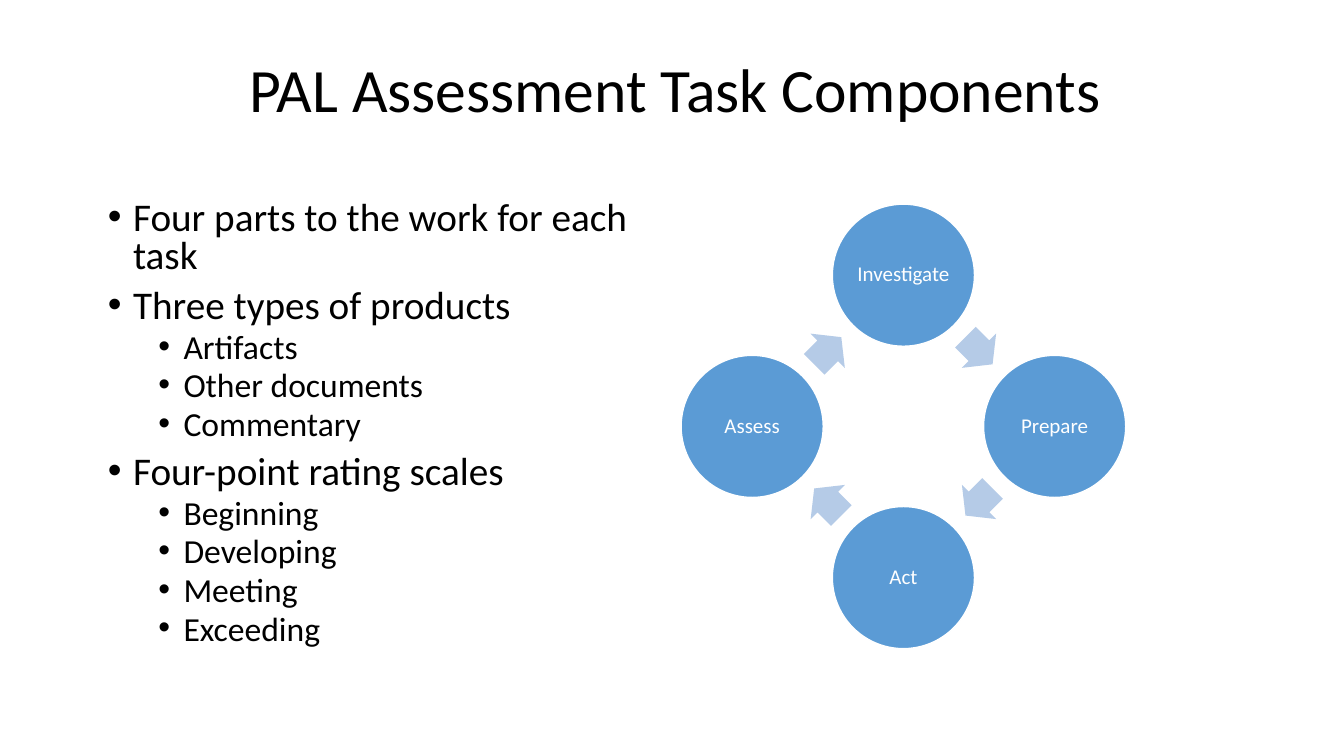
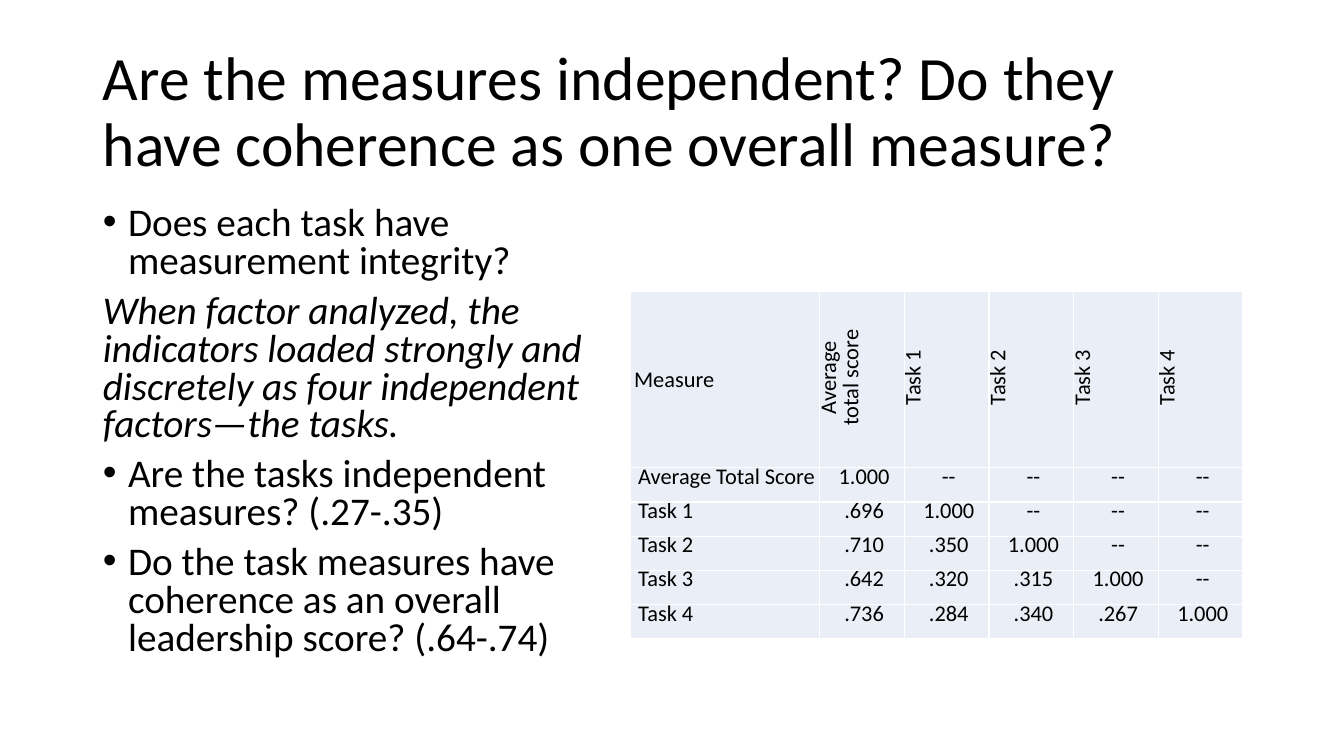
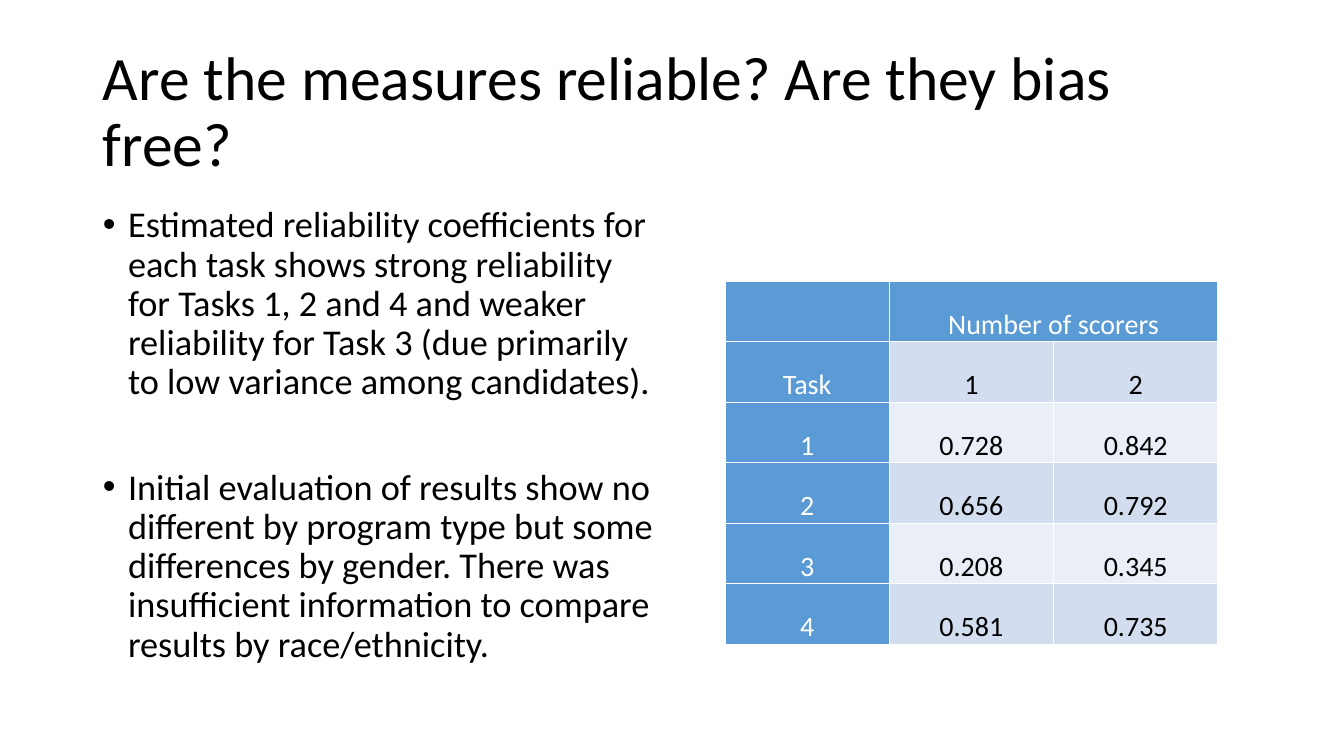
from math import cos, radians, sin

from lxml import etree
from pptx import Presentation
from pptx.dml.color import RGBColor
from pptx.enum.shapes import MSO_SHAPE
from pptx.enum.text import MSO_ANCHOR, MSO_AUTO_SIZE, PP_ALIGN
from pptx.oxml.ns import qn
from pptx.util import Inches, Pt

BLACK = RGBColor(0x00, 0x00, 0x00)
WHITE = RGBColor(0xFF, 0xFF, 0xFF)
BLUE = RGBColor(0x5B, 0x9B, 0xD5)
SOFT = RGBColor(0xB5, 0xCB, 0xE7)
BAND = RGBColor(0xD2, 0xDE, 0xEF)
PALE = RGBColor(0xEA, 0xEF, 0xF7)
FONT = "Calibri"
LEFT, CENTER = PP_ALIGN.LEFT, PP_ALIGN.CENTER
TOP, MIDDLE, BOTTOM = MSO_ANCHOR.TOP, MSO_ANCHOR.MIDDLE, MSO_ANCHOR.BOTTOM
OVAL, ARROW = MSO_SHAPE.OVAL, MSO_SHAPE.RIGHT_ARROW
NO_FIT = MSO_AUTO_SIZE.NONE


def put(para, text, size=16, color=BLACK, align=LEFT, italic=False,
        line=1.0, before=0, indent=(0, 0), bullet=False):
    """Write one formatted paragraph."""
    run = para.add_run()
    run.text = text
    font = run.font
    font.name, font.size, font.italic = FONT, Pt(size), italic
    font.color.rgb = color
    para.alignment, para.line_spacing = align, line
    para.space_before, para.space_after = Pt(before), Pt(0)
    props = para._p.get_or_add_pPr()
    props.set("marL", str(Inches(indent[0])))
    props.set("indent", str(Inches(indent[1])))
    if bullet:
        etree.SubElement(props, qn("a:buFont")).set("typeface", "Arial")
        etree.SubElement(props, qn("a:buChar")).set("char", "•")
    else:
        etree.SubElement(props, qn("a:buNone"))


class Deck:
    """Hold the shared style and the current slide."""

    def __init__(self):
        self.show = Presentation()
        self.show.slide_width = Inches(13.33)
        self.show.slide_height = Inches(7.5)
        self.slide = None

    def place(self, shape, box):
        """Move a placeholder and fix its text size."""
        shape.left, shape.top, shape.width, shape.height = map(Inches, box)
        shape.text_frame.auto_size = NO_FIT
        return shape.text_frame

    def start(self, title, box=(0.92, 0.4, 11.5, 1.45), align=LEFT):
        """Add a slide with its title."""
        self.slide = self.show.slides.add_slide(self.show.slide_layouts[1])
        frame = self.place(self.slide.shapes.title, box)
        frame.vertical_anchor = MIDDLE
        put(frame.paragraphs[0], title, size=44, align=align, line=0.9)

    def body(self, items, box=(0.92, 2, 5.67, 4.76), **style):
        """Fill the body with (text, own format) items."""
        frame = self.place(self.slide.placeholders[1], box)
        base = dict(size=28, line=0.8, before=9, indent=(0.25, -0.25),
                    bullet=True)
        for i, (text, own) in enumerate(items):
            para = frame.add_paragraph() if i else frame.paragraphs[0]
            para.level = 1 if own is SUB else 0
            put(para, text, **{**base, **style, **own})

    def shape(self, kind, mid, size, fill, turn=0):
        """Add a plain shape around a middle point."""
        (x, y), (w, h) = mid, size
        item = self.slide.shapes.add_shape(
            kind, Inches(x - w / 2), Inches(y - h / 2), Inches(w), Inches(h))
        item.shadow.inherit = False
        item.fill.solid()
        item.fill.fore_color.rgb = fill
        item.line.fill.background()
        item.rotation = turn
        return item

    def cycle(self, names, mid, radius):
        """Draw named discs on a ring with arrows between them."""
        step = 360 / len(names)

        def spot(angle, reach):
            turn = radians(angle)
            return mid[0] + reach * sin(turn), mid[1] - reach * cos(turn)

        for i, name in enumerate(names):
            disc = self.shape(OVAL, spot(i * step, radius), (1.41, 1.41), BLUE)
            disc.line.color.rgb, disc.line.width = WHITE, Pt(1)
            frame = disc.text_frame
            frame.word_wrap, frame.vertical_anchor = True, MIDDLE
            frame.margin_left = frame.margin_right = Inches(0.02)
            frame.margin_top = frame.margin_bottom = Inches(0.02)
            put(frame.paragraphs[0], name, size=15, color=WHITE,
                align=CENTER, line=0.9)
            angle = (i + 0.5) * step
            reach = radius * cos(radians(step / 2))
            arrow = self.shape(ARROW, spot(angle, reach), (0.38, 0.48),
                               SOFT, angle)
            arrow.adjustments[0], arrow.adjustments[1] = 0.6, 0.5

    def table(self, rows, at, widths, heights):
        """Add an unstyled table and return it."""
        grid = self.slide.shapes.add_table(
            len(rows), len(widths), Inches(at[0]), Inches(at[1]),
            Inches(sum(widths)), Inches(sum(heights))).table
        grid.first_row = grid.horz_banding = False
        for col, width in zip(grid.columns, widths):
            col.width = Inches(width)
        for row, height in zip(grid.rows, heights):
            row.height = Inches(height)
        return grid

    def cell(self, cell, text, fill, anchor=TOP, side=0.04, turned=False,
             **style):
        """Fill one table cell and rule its edges."""
        cell.fill.solid()
        cell.fill.fore_color.rgb = fill
        cell.vertical_anchor = anchor
        cell.margin_left = cell.margin_right = Inches(side)
        cell.margin_top = cell.margin_bottom = 0
        for i, part in enumerate(text.split("\n")):
            frame = cell.text_frame
            para = frame.add_paragraph() if i else frame.paragraphs[0]
            put(para, part, **style)
        props = cell._tc.get_or_add_tcPr()
        if turned:
            props.set("vert", "vert270")
        for i, edge in enumerate(("a:lnL", "a:lnR", "a:lnT", "a:lnB")):
            rule = etree.Element(qn(edge), w=str(Pt(1)))
            paint = etree.SubElement(rule, qn("a:solidFill"))
            etree.SubElement(paint, qn("a:srgbClr")).set("val", str(WHITE))
            props.insert(i, rule)


SUB = dict(size=24, before=4.5, indent=(0.75, -0.25))
TOP_ITEM = {}


def parts(deck):
    """Build the task components slide."""
    deck.start("PAL Assessment Task Components", (2.2, 0.31, 9, 1.21), CENTER)
    deck.body([
        ("Four parts to the work for each task", TOP_ITEM),
        ("Three types of products", TOP_ITEM),
        ("Artifacts", SUB),
        ("Other documents", SUB),
        ("Commentary", SUB),
        ("Four-point rating scales", TOP_ITEM),
        ("Beginning", SUB),
        ("Developing", SUB),
        ("Meeting", SUB),
        ("Exceeding", SUB),
    ], (0.97, 1.95, 5.67, 4.96))
    deck.cycle(["Investigate", "Prepare", "Act", "Assess"], (8.96, 4.23), 1.5)


def links(deck):
    """Build the independence slide."""
    deck.start("Are the measures independent? Do they have coherence "
               "as one overall measure?")
    deck.body([
        ("Does each task have measurement integrity?", TOP_ITEM),
        ("When factor analyzed, the indicators loaded strongly and discretely "
         "as four independent factors—the tasks.",
         dict(italic=True, bullet=False, indent=(0, 0))),
        ("Are the tasks independent measures? (.27-.35)", TOP_ITEM),
        ("Do the task measures have coherence as an overall leadership "
         "score? (.64-.74)", TOP_ITEM),
    ])
    rows = [
        ["Measure", "Average\ntotal score", "Task 1", "Task 2", "Task 3",
         "Task 4"],
        ["Average Total Score", "1.000"],
        ["Task 1", ".696", "1.000"],
        ["Task 2", ".710", ".350", "1.000"],
        ["Task 3", ".642", ".320", ".315", "1.000"],
        ["Task 4", ".736", ".284", ".340", ".267", "1.000"],
    ]
    grid = deck.table(rows, (6.25, 2.89), [1.88] + [0.84] * 5,
                      [1.75] + [0.34] * 5)
    for r, row in enumerate(rows):
        for c, text in enumerate(row + ["--"] * (6 - len(row))):
            corner = r == c == 0
            deck.cell(grid.cell(r, c), text, PALE,
                      anchor=TOP if r else MIDDLE,
                      turned=r == 0 and c > 0,
                      align=CENTER if c else LEFT,
                      line=1.0 if corner else Pt(16),
                      indent=(0 if corner else 0.04, 0))


def trust(deck):
    """Build the reliability slide."""
    deck.start("Are the measures reliable? Are they bias free?")
    deck.body([
        ("Estimated reliability coefficients for each task shows strong "
         "reliability for Tasks 1, 2 and 4 and weaker reliability for Task 3 "
         "(due primarily to low variance among candidates).", TOP_ITEM),
        ("Initial evaluation of results show no different by program type but "
         "some differences by gender. There was insufficient information to "
         "compare results by race/ethnicity.", dict(before=47.5)),
    ], size=25.9, line=0.9)
    rows = [
        ["", "Number of scorers", ""],
        ["Task", "1", "2"],
        ["1", "0.728", "0.842"],
        ["2", "0.656", "0.792"],
        ["3", "0.208", "0.345"],
        ["4", "0.581", "0.735"],
    ]
    grid = deck.table(rows, (7.19, 2.79), [1.63] * 3, [0.6] * 6)
    for r, row in enumerate(rows):
        for c, text in enumerate(row):
            head = r == 0 or c == 0
            fill = BLUE if head else BAND if r % 2 else PALE
            deck.cell(grid.cell(r, c), text, fill, BOTTOM, 0.07, size=20,
                      color=WHITE if head else BLACK, align=CENTER)
    grid.cell(0, 1).merge(grid.cell(0, 2))


def main():
    """Build and save the deck."""
    deck = Deck()
    for build in (parts, links, trust):
        build(deck)
    deck.show.save("out.pptx")


if __name__ == "__main__":
    main()
